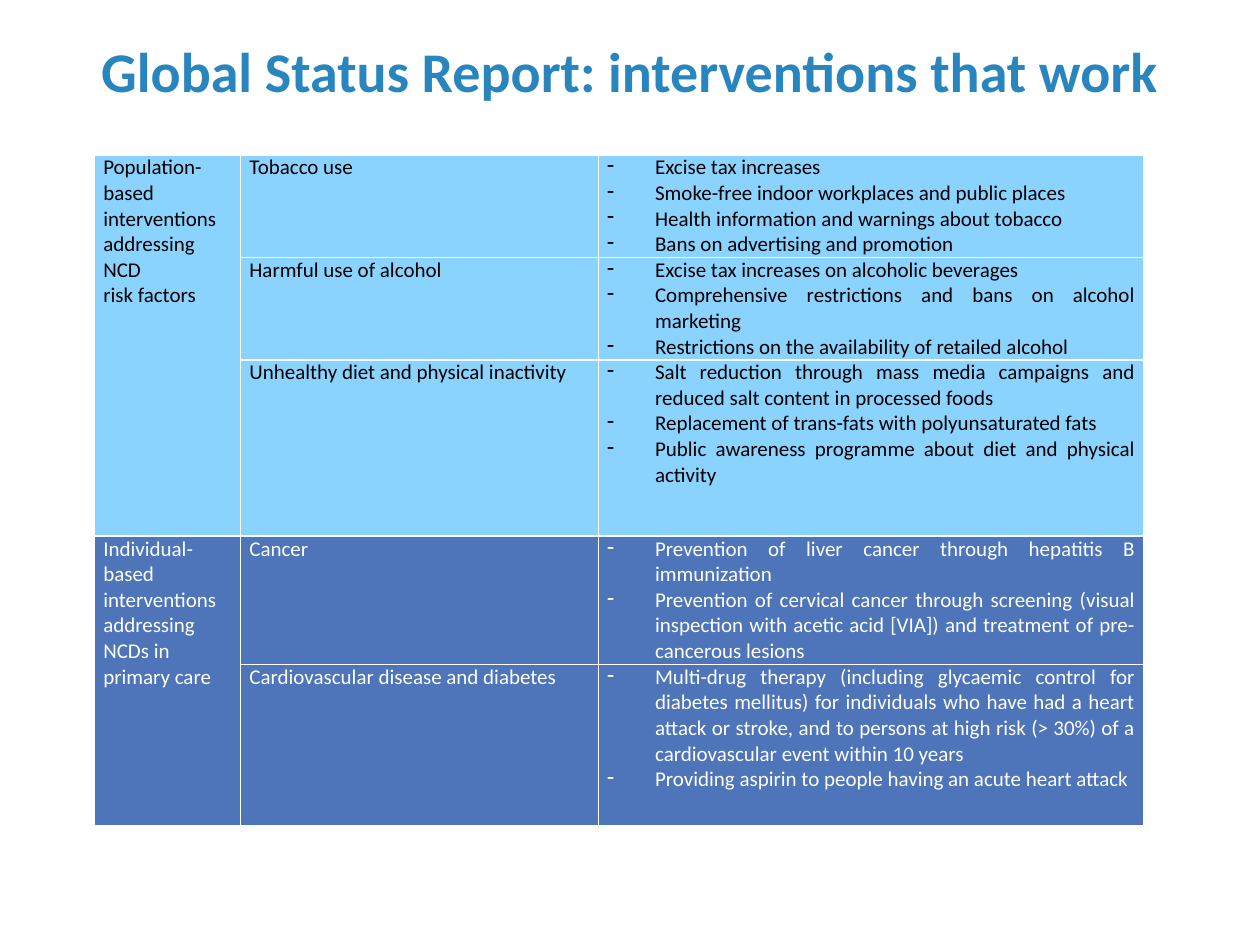
from lxml import etree
from pptx import Presentation
from pptx.dml.color import RGBColor
from pptx.enum.text import MSO_ANCHOR, PP_ALIGN
from pptx.oxml.ns import qn
from pptx.util import Inches, Pt

CENTER, JUSTIFY, LEFT = PP_ALIGN.CENTER, PP_ALIGN.JUSTIFY, PP_ALIGN.LEFT
TOP = MSO_ANCHOR.TOP
WHITE, BLACK = "FFFFFF", "000000"
COLUMN_WIDTHS = [1.16, 2.84, 4.33]
ROW_HEIGHTS = [0.8, 0.8, 1.4, 1, 1.28]
CELL_FORMAT = {
    "margin_left": Inches(0.07),
    "margin_right": Inches(0.07),
    "margin_top": 0,
    "margin_bottom": 0,
    "vertical_anchor": TOP,
}
GROUPS = [
    {
        "scope": ["Population-based interventions ", "addressing NCD ", "risk factors"],
        "align": JUSTIFY, "fill": "8BD3FF", "color": BLACK,
        "topics": [
            ("Tobacco use", [
                "Excise tax increases ",
                "Smoke-free indoor workplaces and public places",
                "Health information and warnings about tobacco ",
                "Bans on advertising and promotion"]),
            ("Harmful use of alcohol", [
                "Excise tax increases on alcoholic beverages ",
                "Comprehensive restrictions and bans on alcohol marketing",
                "Restrictions on the availability of retailed alcohol "]),
            ("Unhealthy diet and physical inactivity", [
                "Salt reduction through mass media campaigns and reduced salt "
                "content in processed foods",
                "Replacement of trans-fats with polyunsaturated fats",
                "Public awareness programme about diet and physical activity"]),
        ],
    },
    {
        "scope": ["Individual-based interventions", "addressing NCDs in primary care"],
        "align": LEFT, "fill": "4E75B9", "color": WHITE,
        "topics": [
            ("Cancer", [
                "Prevention of liver cancer through hepatitis B immunization",
                "Prevention of cervical cancer through screening (visual inspection "
                "with acetic acid [VIA]) and treatment of pre-cancerous lesions"]),
            ("Cardiovascular disease and diabetes", [
                "Multi-drug therapy (including glycaemic control for diabetes "
                "mellitus) for individuals who have had a heart attack or stroke, "
                "and to persons at high risk (> 30%) of a cardiovascular event "
                "within 10 years",
                "Providing aspirin to people having an acute heart attack"]),
        ],
    },
]


def rgb(value):
    """Return the colour for a hex string."""
    return RGBColor.from_string(value)


def apply(target, values):
    """Set each attribute in values on the target."""
    for name, value in values.items():
        setattr(target, name, value)


def style_font(font, size, color, bold=False):
    """Give a font its face, size, weight and colour."""
    apply(font, {"name": "Calibri", "size": Pt(size), "bold": bold})
    font.color.rgb = rgb(color)


def add_dash(paragraph):
    """Turn a paragraph into a hanging dash item."""
    properties = paragraph._p.get_or_add_pPr()
    properties.set("marL", str(Inches(0.38)))
    properties.set("indent", str(-Inches(0.38)))
    etree.SubElement(properties, qn("a:buChar")).set("char", "-")


def add_borders(cell, color=WHITE, width=1):
    """Draw a solid line on all four sides of a cell."""
    properties = cell._tc.get_or_add_tcPr()
    for side in ("a:lnL", "a:lnR", "a:lnT", "a:lnB"):
        line = etree.SubElement(properties, qn(side), w=str(Pt(width)))
        fill = etree.SubElement(line, qn("a:solidFill"))
        etree.SubElement(fill, qn("a:srgbClr"), val=color)


def style_cell(cell, fill):
    """Give a cell its margins, borders and fill."""
    apply(cell, CELL_FORMAT)
    add_borders(cell)
    cell.fill.solid()
    cell.fill.fore_color.rgb = rgb(fill)


def write_cell(cell, lines, color, align, dashed=False):
    """Write one paragraph per line into a cell."""
    frame = cell.text_frame
    for index, line in enumerate(lines):
        paragraph = frame.add_paragraph() if index else frame.paragraphs[0]
        paragraph.text = line
        paragraph.alignment = align
        if dashed:
            add_dash(paragraph)
        style_font(paragraph.font, 12, color)


def add_title(slide, title):
    """Add the centred slide title."""
    box = slide.shapes.add_textbox(Inches(0.5), Inches(0.3), Inches(9), Inches(1.25))
    frame = box.text_frame
    apply(frame, {"word_wrap": True, "vertical_anchor": TOP})
    paragraph = frame.paragraphs[0]
    apply(paragraph, {"text": title, "alignment": CENTER, "line_spacing": 0.9})
    style_font(paragraph.font, 32, "2985BD", bold=True)


def add_interventions(slide):
    """Add the table of interventions by scope and topic."""
    table = slide.shapes.add_table(
        len(ROW_HEIGHTS), len(COLUMN_WIDTHS), Inches(0.75), Inches(1.23),
        Inches(sum(COLUMN_WIDTHS)), Inches(sum(ROW_HEIGHTS))).table
    apply(table, {"first_row": False, "horz_banding": False})
    for column, width in zip(table.columns, COLUMN_WIDTHS):
        column.width = Inches(width)
    for row, height in zip(table.rows, ROW_HEIGHTS):
        row.height = Inches(height)
    first = 0
    for group in GROUPS:
        color = group["color"]
        last = first + len(group["topics"]) - 1
        for row, (topic, actions) in enumerate(group["topics"], first):
            for column in range(len(COLUMN_WIDTHS)):
                style_cell(table.cell(row, column), group["fill"])
            write_cell(table.cell(row, 1), [topic], color, LEFT)
            write_cell(table.cell(row, 2), actions, color, JUSTIFY, dashed=True)
        scope = table.cell(first, 0)
        scope.merge(table.cell(last, 0))
        write_cell(scope, group["scope"], color, group["align"])
        first = last + 1


def main():
    """Build the slide and save it."""
    deck = Presentation()
    apply(deck, {"slide_width": Inches(10), "slide_height": Inches(7.5)})
    slide = deck.slides.add_slide(deck.slide_layouts[6])
    add_interventions(slide)
    add_title(slide, "Global Status Report: interventions that work")
    deck.save("out.pptx")


if __name__ == "__main__":
    main()
